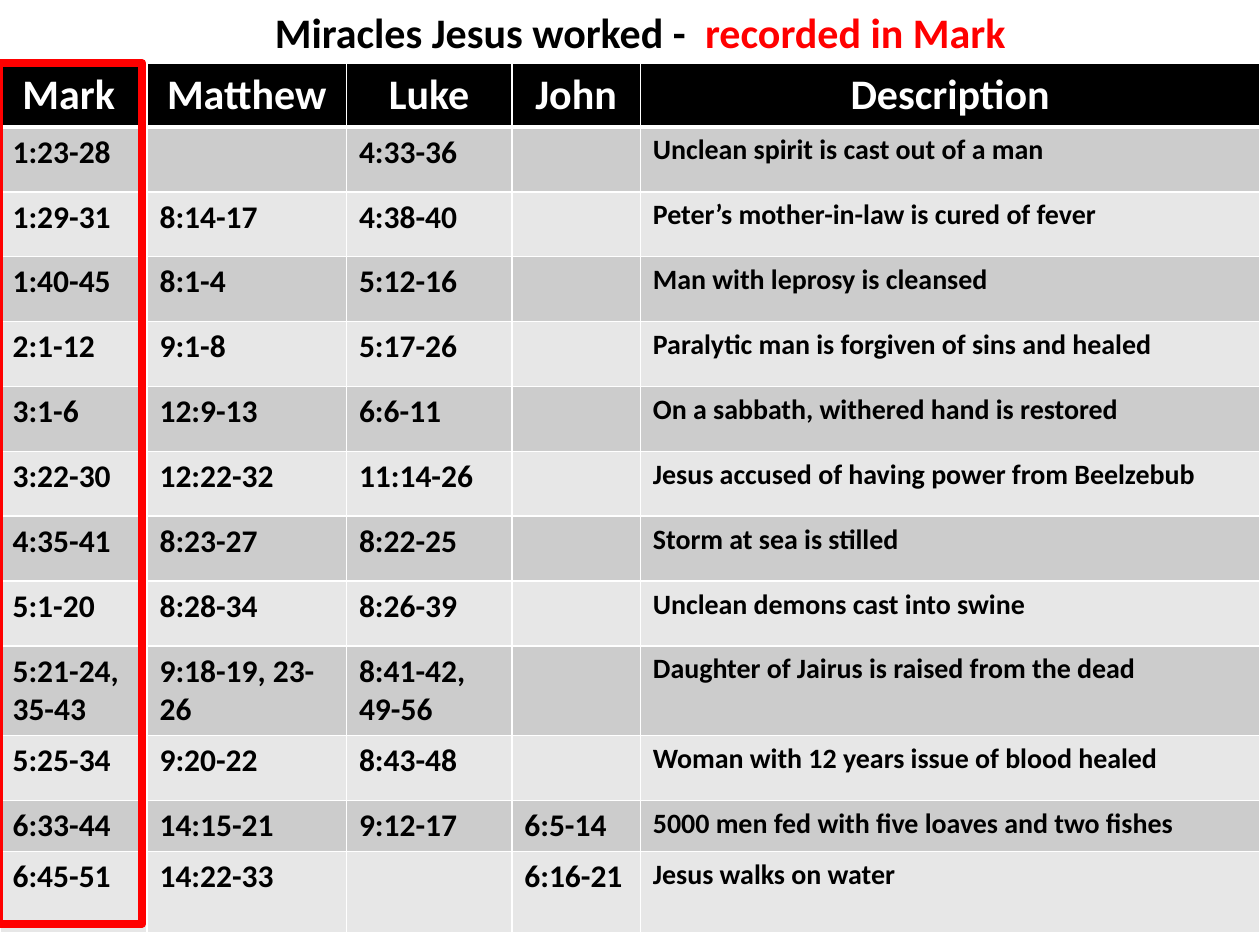
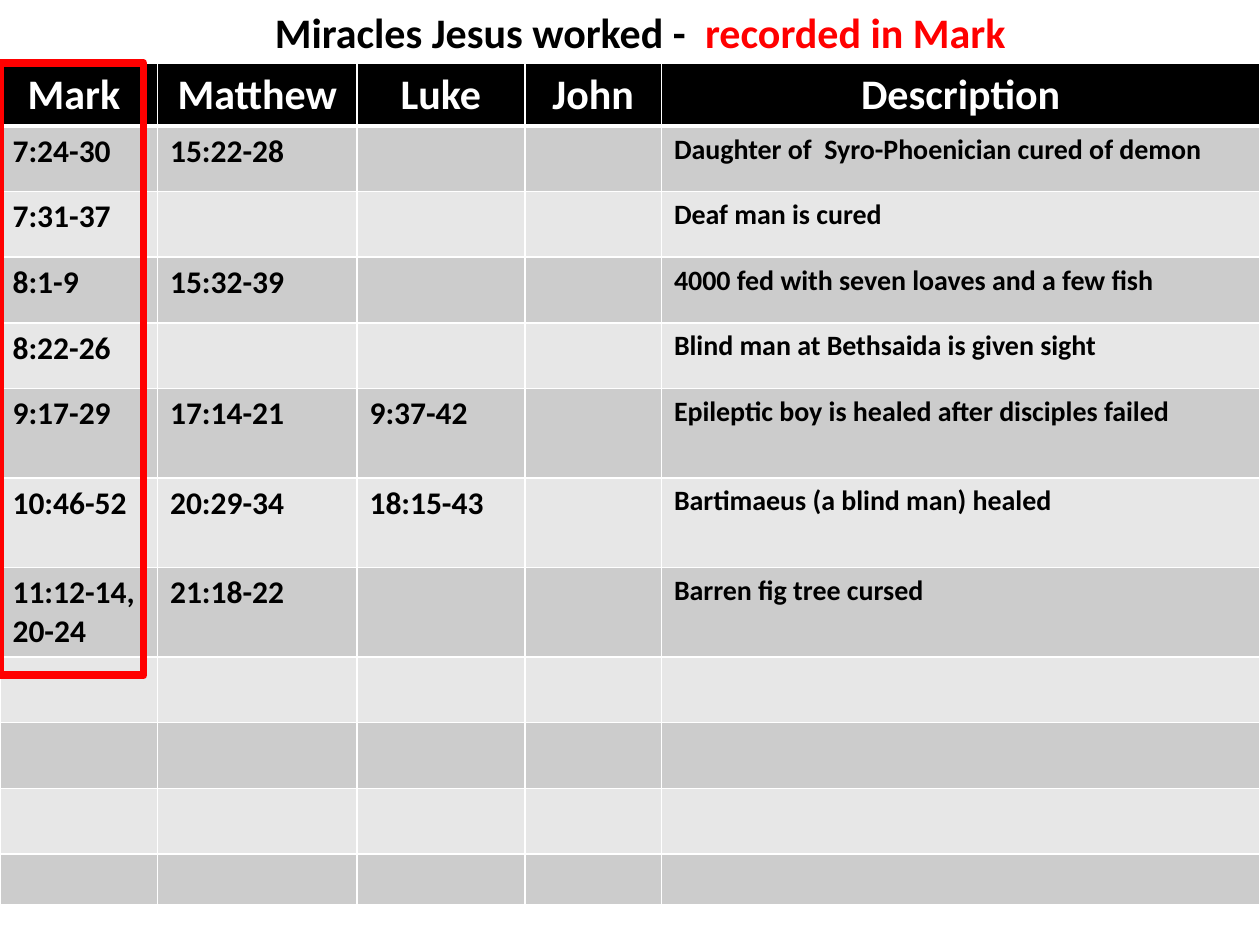
import dataclasses

import pptx
import pptx.dml.color
import pptx.enum.shapes
import pptx.enum.text
import pptx.oxml
import pptx.oxml.ns
import pptx.util

Pt = pptx.util.Pt
NO_WRAP = {"word_wrap": False, "auto_size": pptx.enum.text.MSO_AUTO_SIZE.SHAPE_TO_FIT_TEXT}


@dataclasses.dataclass(frozen=True)
class Theme:
    """Colours, font and type sizes shared by the slides."""
    font: str = "Calibri"
    black: str = "000000"
    white: str = "FFFFFF"
    red: str = "FF0000"
    bands: tuple = ("E7E7E7", "CCCCCC")
    heading: float = 24
    verse: float = 18
    description: float = 16
    grid: float = 1
    header_rule: float = 3
    frame: float = 4.5


@dataclasses.dataclass(frozen=True)
class Box:
    """A place on the slide, in points."""
    left: float
    top: float
    width: float
    height: float

    def lengths(self):
        """Return left, top, width and height as slide lengths."""
        return [Pt(side) for side in dataclasses.astuple(self)]


THEME = Theme()
TITLE_BOX = Box(150, 0, 443.5, 36.4)
GOSPELS = ("Mark ", "Matthew", "Luke", "John", "Description")

FIRST_MIRACLES = [
    ("1:23-28", "", "4:33-36", "", "Unclean spirit is cast out of a man"),
    ("1:29-31", "8:14-17", "4:38-40", "", "Peter’s mother-in-law is cured of fever"),
    ("1:40-45", "8:1-4", "5:12-16", "", "Man with leprosy is cleansed"),
    ("2:1-12", "9:1-8", "5:17-26", "", "Paralytic man is forgiven of sins and healed"),
    ("3:1-6", "12:9-13", "6:6-11", "", "On a sabbath, withered hand is restored"),
    ("3:22-30", "12:22-32", "11:14-26", "", "Jesus accused of having power from Beelzebub"),
    ("4:35-41", "8:23-27", "8:22-25", "", "Storm at sea is stilled"),
    ("5:1-20", "8:28-34", "8:26-39", "", "Unclean demons cast into swine"),
    ("5:21-24, 35-43", "9:18-19, 23-26", "8:41-42, 49-56", "",
     "Daughter of Jairus is raised from the dead"),
    ("5:25-34", "9:20-22", "8:43-48", "", "Woman with 12 years issue of blood healed"),
    ("6:33-44", "14:15-21", "9:12-17", "6:5-14", "5000 men fed with five loaves and two fishes"),
    ("6:45-51", "14:22-33", "", "6:16-21", "Jesus walks on water"),
]
LATER_MIRACLES = [
    ("7:24-30", "15:22-28", "", "", "Daughter of  Syro-Phoenician cured of demon"),
    ("7:31-37", "", "", "", "Deaf man is cured"),
    ("8:1-9", "15:32-39", "", "", "4000 fed with seven loaves and a few fish"),
    ("8:22-26", "", "", "", "Blind man at Bethsaida is given sight"),
    ("9:17-29", "17:14-21", "9:37-42", "", "Epileptic boy is healed after disciples failed"),
    ("10:46-52", "20:29-34", "18:15-43", "", "Bartimaeus (a blind man) healed"),
    ("11:12-14, 20-24", "21:18-22", "", "", "Barren fig tree cursed"),
] + [("",) * 5] * 4

PAGES = [
    {"miracles": FIRST_MIRACLES,
     "columns": (84, 114, 94.5, 73.5, 354),
     "rows": [36] + [37.1] * 8 + [51.2, 37.1, 29.2, 46.3],
     "mark_frame": Box(-0.7, 36, 82, 491.8)},
    {"miracles": LATER_MIRACLES,
     "columns": (90, 114, 96, 78, 342),
     "rows": [36] + [37.5] * 4 + [51.2] * 3 + [37.5] * 3 + [29.2],
     "mark_frame": Box(0, 36, 82, 350)},
]


def rgb(colour):
    """Turn a hex code into a colour."""
    return pptx.dml.color.RGBColor.from_string(colour)


def apply_format(target, formats):
    """Set each named attribute on the target."""
    for name, setting in formats.items():
        setattr(target, name, setting)


def write(paragraph, words, size, colour):
    """Add a bold run to the paragraph."""
    run = paragraph.add_run()
    run.text = words
    apply_format(run.font, {"name": THEME.font, "size": Pt(size), "bold": True})
    run.font.color.rgb = rgb(colour)


def draw_borders(cell, bottom):
    """Draw white lines on all four sides of a cell."""
    for side in "LRTB":
        width = Pt(bottom if side == "B" else THEME.grid)
        cell._tc.get_or_add_tcPr().append(pptx.oxml.parse_xml(
            f'<a:ln{side} {pptx.oxml.ns.nsdecls("a")} w="{width}"><a:solidFill>'
            f'<a:srgbClr val="{THEME.white}"/></a:solidFill></a:ln{side}>'))


def fill_cell(cell, words, fill, size, colour, bottom=THEME.grid):
    """Give a cell its borders, fill and words."""
    draw_borders(cell, bottom)
    cell.fill.solid()
    cell.fill.fore_color.rgb = rgb(fill)
    if words:
        write(cell.text_frame.paragraphs[0], words, size, colour)


def add_title(slide, box):
    """Place the two-coloured title."""
    frame = slide.shapes.add_textbox(*box.lengths()).text_frame
    apply_format(frame, NO_WRAP)
    write(frame.paragraphs[0], "Miracles Jesus worked -  ", THEME.heading, THEME.black)
    write(frame.paragraphs[0], "recorded in Mark", THEME.heading, THEME.red)


def add_miracles(slide, box, columns, rows, miracles):
    """Place the table of parallel passages."""
    table = slide.shapes.add_table(len(rows), len(columns), *box.lengths()).table
    table.horz_banding = False
    for column, width in zip(table.columns, columns):
        column.width = Pt(width)
    for row, height in zip(table.rows, rows):
        row.height = Pt(height)
    for index, gospel in enumerate(GOSPELS):
        heading = table.cell(0, index)
        fill_cell(heading, gospel, THEME.black, THEME.heading, THEME.white, THEME.header_rule)
        heading.text_frame.paragraphs[0].alignment = pptx.enum.text.PP_ALIGN.CENTER
    sizes = [THEME.verse] * 4 + [THEME.description]
    for number, miracle in enumerate(miracles, 1):
        for index, (words, size) in enumerate(zip(miracle, sizes)):
            fill_cell(table.cell(number, index), words, THEME.bands[number % 2], size, THEME.black)


def add_mark_frame(slide, box):
    """Outline the Mark column in red."""
    outline = slide.shapes.add_shape(pptx.enum.shapes.MSO_SHAPE.RECTANGLE, *box.lengths())
    outline.shadow.inherit = False
    outline.fill.background()
    outline.line.color.rgb = rgb(THEME.red)
    outline.line.width = Pt(THEME.frame)


def add_page(deck, miracles, columns, rows, mark_frame):
    """Build one slide of miracles."""
    slide = deck.slides.add_slide(deck.slide_layouts[6])
    add_miracles(slide, Box(0, 36, sum(columns), sum(rows)), columns, rows, miracles)
    add_title(slide, TITLE_BOX)
    add_mark_frame(slide, mark_frame)


def main():
    """Build and save the deck."""
    deck = pptx.Presentation()
    apply_format(deck, {"slide_width": Pt(720), "slide_height": Pt(540)})
    for page in PAGES:
        add_page(deck, **page)
    deck.save("out.pptx")


if __name__ == "__main__":
    main()
